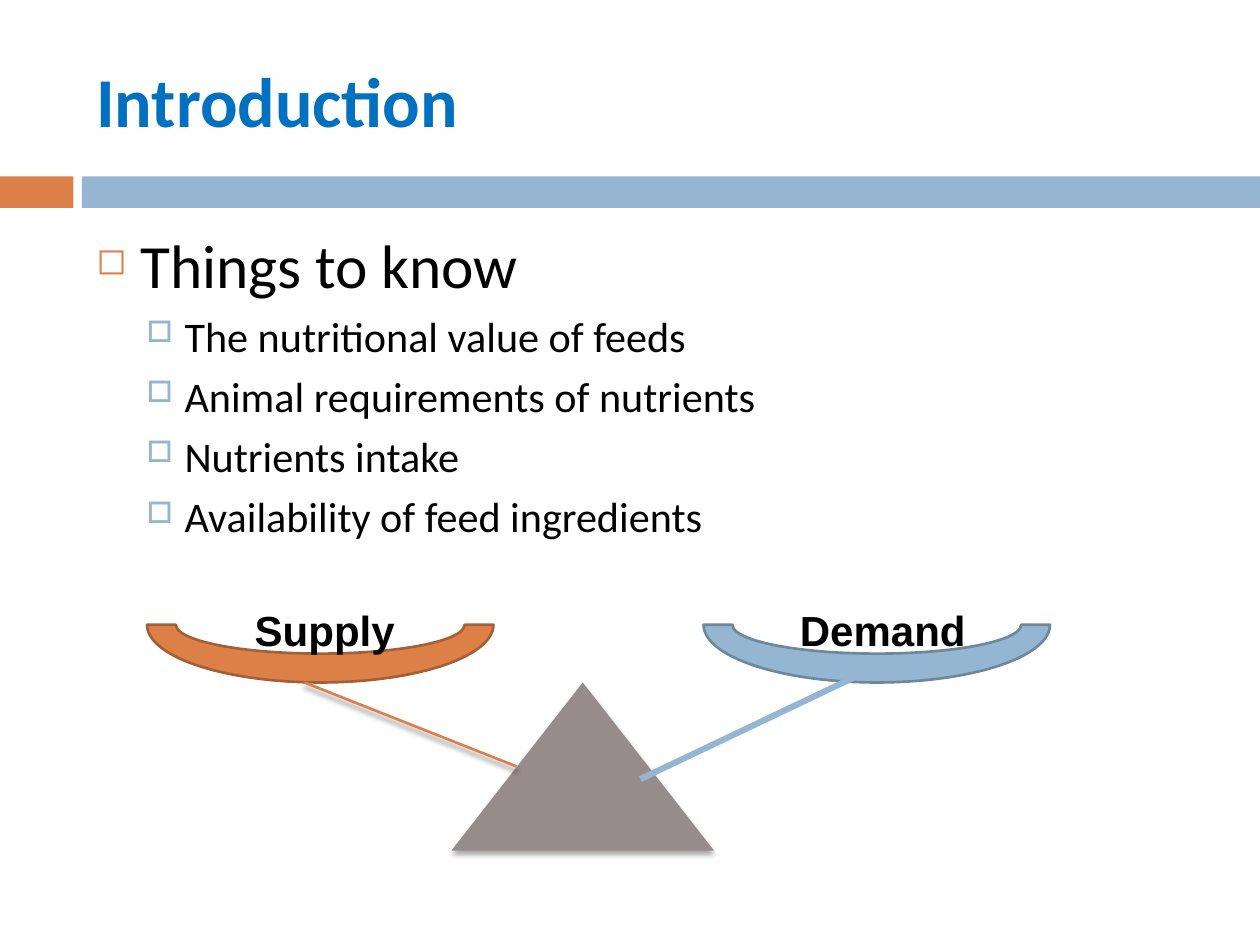
from typing import NamedTuple, Optional

from lxml import etree
from pptx import Presentation
from pptx import util as u
from pptx.dml.color import RGBColor
from pptx.enum import shapes, text
from pptx.oxml import ns

COLUMNS, ROWS = 120, 90
ORANGE, BLUE, GREY = "DD8047", "94B6D2", "968C8C"
TITLE_BLUE, BLACK = "0070C0", "000000"

presentation = Presentation()
presentation.slide_width, presentation.slide_height = u.Inches(10), u.Inches(7.5)
slide = presentation.slides.add_slide(presentation.slide_layouts[6])


class Box(NamedTuple):
    """A place on the slide, in grid columns and rows."""
    left: float
    top: float
    width: float
    height: float


class Shadow(NamedTuple):
    opacity: int
    blur: float
    distance: float


class Font(NamedTuple):
    name: str
    size: float
    colour: str = BLACK
    bold: bool = False


class Level(NamedTuple):
    """Indents in inches, spacing in points, bullet size in percent."""
    margin: float
    hanging: float
    space_before: float
    bullet: str
    bullet_colour: str
    bullet_size: int
    font: Font


class Pan(NamedTuple):
    """One side of the balance."""
    box: Box
    fill: str
    outline: str
    label: str
    label_box: Box
    label_indent: float
    arm: tuple[float, float, float, float]
    arm_width: float
    arm_shadow: Optional[Shadow]


def across(columns: float) -> int:
    return round(presentation.slide_width * columns / COLUMNS)


def down(rows: float) -> int:
    return round(presentation.slide_height * rows / ROWS)


def place(box: Box) -> tuple[int, int, int, int]:
    return across(box.left), down(box.top), across(box.width), down(box.height)


def rgb(colour: str) -> RGBColor:
    return RGBColor.from_string(colour)


def add_element(parent, tag: str, **attributes):
    element = etree.SubElement(parent, ns.qn(tag))
    for name, value in attributes.items():
        element.set(name, str(value))
    return element


def set_shadow(shape, shadow: Optional[Shadow]) -> None:
    """Cast a shadow straight down, or none at all."""
    effects = add_element(shape._element.spPr, "a:effectLst")
    if shadow:
        outer = add_element(effects, "a:outerShdw", blurRad=u.Pt(shadow.blur),
                            dist=u.Pt(shadow.distance), dir=90 * 60000, rotWithShape=0)
        colour = add_element(outer, "a:srgbClr", val=BLACK)
        add_element(colour, "a:alpha", val=shadow.opacity * 1000)


def add_filled(preset, box: Box, fill: str, outline: Optional[str] = None,
               shadow: Optional[Shadow] = None):
    shape = slide.shapes.add_shape(preset, *place(box))
    shape.fill.solid()
    shape.fill.fore_color.rgb = rgb(fill)
    if outline:
        shape.line.color.rgb = rgb(outline)
        shape.line.width = u.Pt(1.5)
    else:
        shape.line.fill.background()
    set_shadow(shape, shadow)
    return shape


def add_frame(box: Box, anchor=text.MSO_ANCHOR.TOP):
    frame = slide.shapes.add_textbox(*place(box)).text_frame
    frame.word_wrap = True
    frame.vertical_anchor = anchor
    return frame


def add_run(paragraph, words: str, font: Font) -> None:
    run = paragraph.add_run()
    run.text = words
    run.font.name, run.font.size = font.name, u.Pt(font.size)
    run.font.bold = font.bold
    run.font.color.rgb = rgb(font.colour)


def format_bullet(paragraph, level: Level) -> None:
    paragraph.space_before = u.Pt(level.space_before)
    properties = paragraph._p.get_or_add_pPr()
    properties.set("marL", str(u.Inches(level.margin)))
    properties.set("indent", str(-u.Inches(level.hanging)))
    colour = add_element(properties, "a:buClr")
    add_element(colour, "a:srgbClr", val=level.bullet_colour)
    add_element(properties, "a:buSzPct", val=level.bullet_size * 1000)
    add_element(properties, "a:buChar", char=level.bullet)


def add_arm(pan: Pan) -> None:
    start_x, start_y, end_x, end_y = pan.arm
    arm = slide.shapes.add_connector(shapes.MSO_CONNECTOR.STRAIGHT, across(start_x),
                                     down(start_y), across(end_x), down(end_y))
    arm.line.color.rgb = rgb(pan.fill)
    arm.line.width = u.Pt(pan.arm_width)
    set_shadow(arm, pan.arm_shadow)


def add_label(pan: Pan) -> None:
    paragraph = add_frame(pan.label_box).paragraphs[0]
    paragraph._p.get_or_add_pPr().set("marL", str(u.Inches(pan.label_indent)))
    add_run(paragraph, pan.label, Font("Arial", 24, bold=True))


TOPIC = Level(0.35, 0.35, 7, "◻", ORANGE, 60, Font("Calibri", 35.1))
DETAIL = Level(0.7, 0.3, 5.5, "□", BLUE, 70, Font("Calibri", 24.1))
BULLETS = [
    (TOPIC, "Things to know"),
    (DETAIL, "The nutritional value of feeds"),
    (DETAIL, "Animal requirements of nutrients"),
    (DETAIL, "Nutrients intake"),
    (DETAIL, "Availability of feed ingredients"),
]
PANS = [
    Pan(Box(14, 54, 33, 11), ORANGE, "A35F35", "Supply", Box(22, 57, 17, 6), 0.09,
        (29, 65, 49.2, 73), 1.5, Shadow(45, 3, 2.4)),
    Pan(Box(67, 54, 33, 11), BLUE, "6D879B", "Demand", Box(75, 57, 20, 6), 0,
        (82, 64.2, 61, 74.2), 3.5, None),
]

for band, band_fill in ((Box(0, 16.8, 7, 3), ORANGE), (Box(7.8, 16.8, 112.2, 3), BLUE)):
    add_filled(shapes.MSO_SHAPE.RECTANGLE, band, band_fill)

title = add_frame(Box(8, 3, 107, 13), text.MSO_ANCHOR.MIDDLE)
add_run(title.paragraphs[0], "Introduction", Font("Calibri", 40, TITLE_BLUE, True))

body = add_frame(Box(8, 21, 107, 34))
for index, (bullet_level, wording) in enumerate(BULLETS):
    bullet = body.add_paragraph() if index else body.paragraphs[0]
    format_bullet(bullet, bullet_level)
    add_run(bullet, wording, bullet_level.font)

for pan in PANS:
    add_filled(shapes.MSO_SHAPE.BLOCK_ARC, pan.box, pan.fill, pan.outline).rotation = 180
add_filled(shapes.MSO_SHAPE.ISOSCELES_TRIANGLE, Box(43, 65, 25, 16), GREY,
           shadow=Shadow(35, 3, 2))
for pan in PANS:
    add_arm(pan)
for pan in PANS:
    add_label(pan)

presentation.save("out.pptx")
